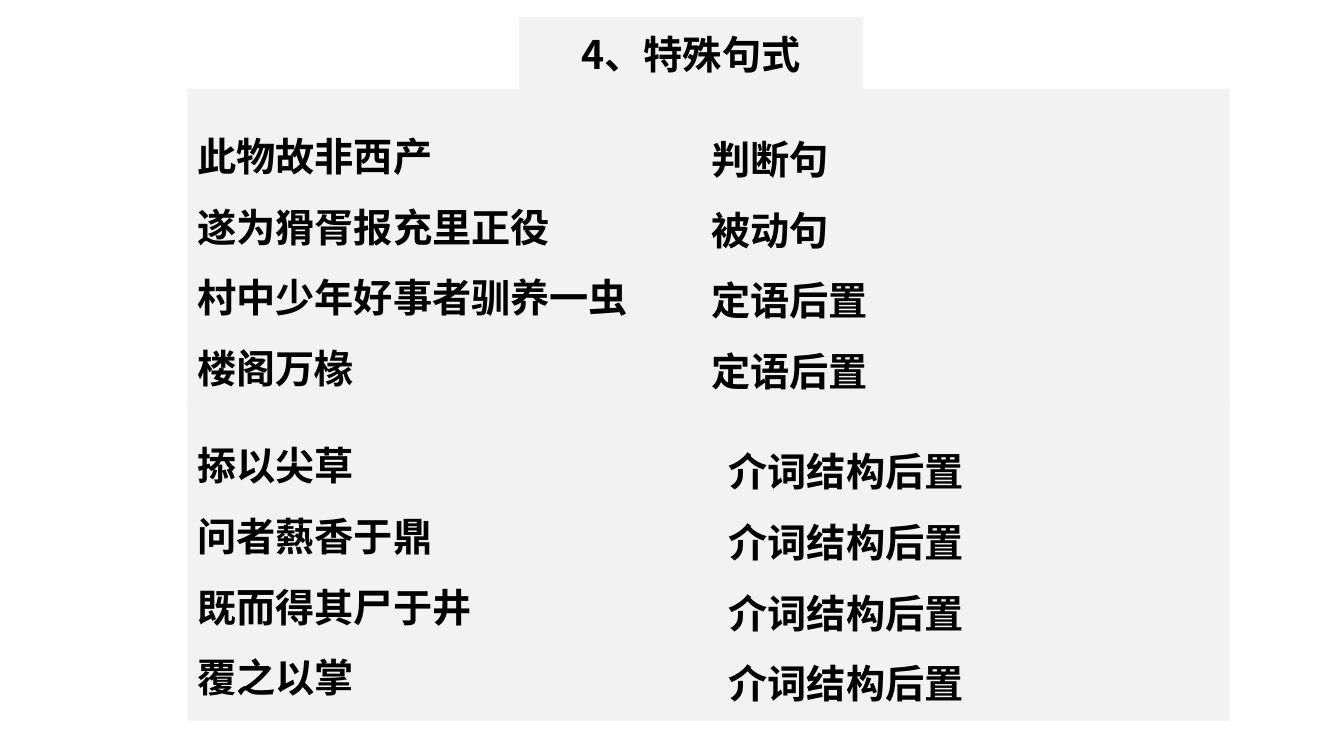
from lxml import etree
from pptx import Presentation
from pptx.dml.color import RGBColor
from pptx.enum.shapes import MSO_SHAPE
from pptx.enum.text import MSO_ANCHOR, MSO_AUTO_SIZE, PP_ALIGN
from pptx.oxml.ns import qn
from pptx.util import Pt
from dataclasses import dataclass


@dataclass(frozen=True)
class Theme:
    panel: RGBColor = RGBColor(0xF2, 0xF2, 0xF2)
    ink: RGBColor = RGBColor(0, 0, 0)
    font: str = "Noto Sans CJK SC"
    size: Pt = Pt(28)
    spacing: float = 1.5


theme = Theme()


def write_lines(frame, lines, align=PP_ALIGN.LEFT, spacing=None):
    frame.word_wrap = True
    for index, line in enumerate(lines):
        paragraph = frame.add_paragraph() if index else frame.paragraphs[0]
        paragraph.alignment = align
        paragraph.line_spacing = spacing
        run = paragraph.add_run()
        run.text = line
        run.font.name = theme.font
        run.font.size = theme.size
        run.font.bold = True
        run.font.color.rgb = theme.ink
        east_asian = etree.SubElement(run.font._element, qn("a:ea"))
        east_asian.set("typeface", theme.font)


def add_panel(left, top, width, height):
    panel = slide.shapes.add_shape(
        MSO_SHAPE.RECTANGLE, Pt(left), Pt(top), Pt(width), Pt(height))
    panel.shadow.inherit = False
    panel.fill.solid()
    panel.fill.fore_color.rgb = theme.panel
    panel.line.fill.background()
    panel.text_frame.vertical_anchor = MSO_ANCHOR.MIDDLE
    return panel.text_frame


prs = Presentation()
prs.slide_width = Pt(960)
prs.slide_height = Pt(540)
slide = prs.slides.add_slide(prs.slide_layouts[6])

heading = add_panel(370.8, 12.2, 245.5, 51.8)
write_lines(heading, ["4、特殊句式"], PP_ALIGN.CENTER)

groups = [
    (63.4, (501.1, 76.3, 231.8), [
        ("此物故非西产", "判断句"),
        ("遂为猾胥报充里正役", "被动句"),
        ("村中少年好事者驯养一虫", "定语后置"),
        ("楼阁万椽", "定语后置"),
    ]),
    (284.4, (513.4, 299.5, 219.6), [
        ("掭以尖草", "介词结构后置"),
        ("问者爇香于鼎", "介词结构后置"),
        ("既而得其尸于井", "介词结构后置"),
        ("覆之以掌", "介词结构后置"),
    ]),
]

for panel_top, (left, top, width), pairs in groups:
    sentences, patterns = zip(*pairs)
    examples = add_panel(133.9, panel_top, 744.5, 230.4)
    write_lines(examples, sentences, spacing=theme.spacing)
    answers = slide.shapes.add_textbox(
        Pt(left), Pt(top), Pt(width), Pt(211)).text_frame
    write_lines(answers, patterns, spacing=theme.spacing)
    answers.auto_size = MSO_AUTO_SIZE.SHAPE_TO_FIT_TEXT

prs.save("out.pptx")
